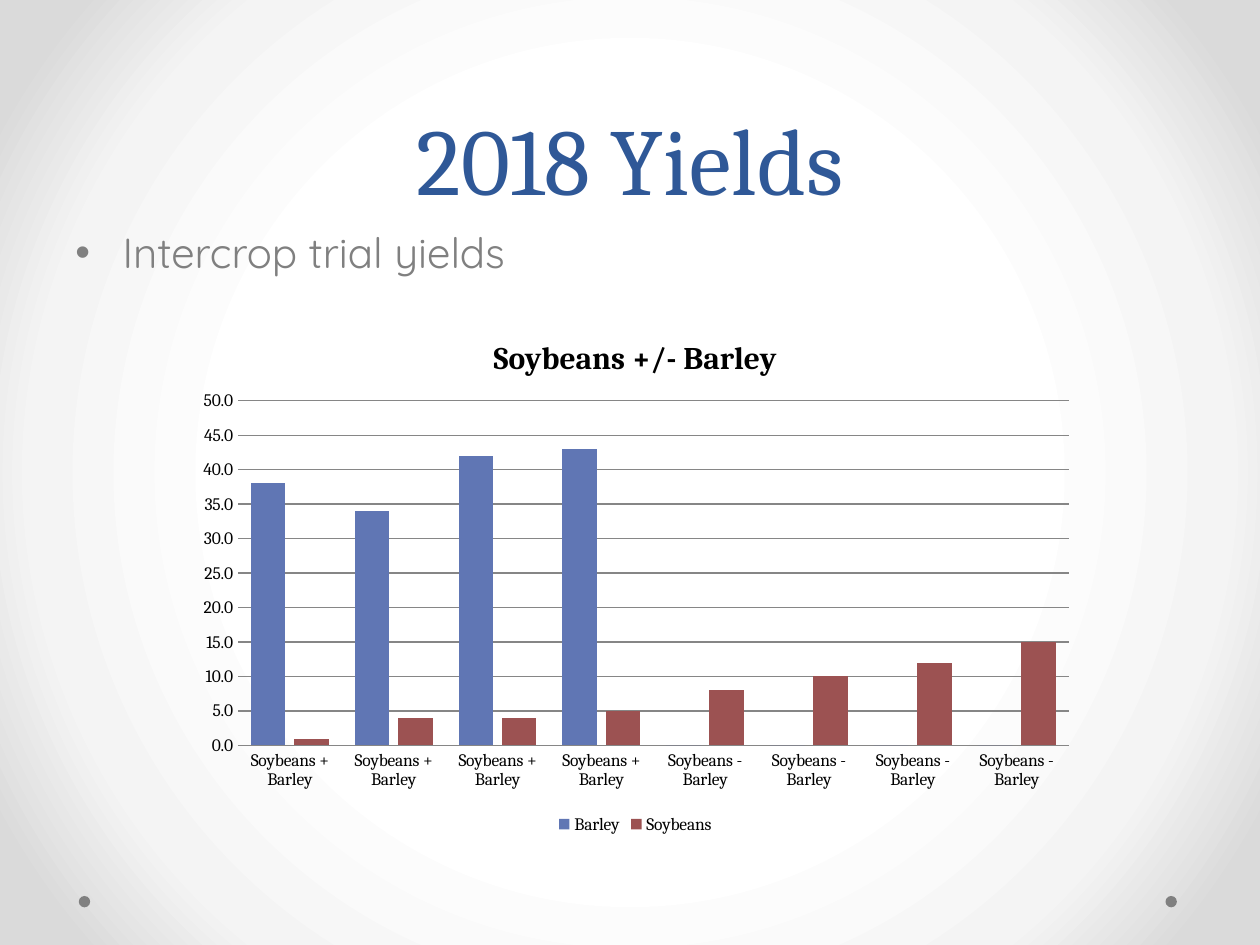
import pptx
import pptx.chart.data
import pptx.dml.color
import pptx.enum.chart
import pptx.enum.shapes
import pptx.enum.text
import pptx.oxml
import pptx.oxml.ns
import pptx.util

Pt = pptx.util.Pt
COLORS = {
    "title": "2F5897",
    "grey": "808080",
    "text": "000000",
    "grid": "868686",
    "Barley": "6076B4",
    "Soybeans": "9C5252",
}
BACKGROUND_STOPS = [(50, "FFFFFF"), (76, "F4F4F4"), (92, "DADADA")]
PLOT_AREA = {"x": 0.06, "y": 0.165, "w": 0.92, "h": 0.657}
CATEGORIES = ["Soybeans + Barley"] * 4 + ["Soybeans - Barley"] * 4
YIELDS = {
    "Barley": [38, 34, 42, 43, 0, 0, 0, 0],
    "Soybeans": [1, 4, 4, 5, 8, 10, 12, 15],
}


def color(name):
    return pptx.dml.color.RGBColor.from_string(COLORS[name])


def set_font(font, face, size, name, bold=False):
    font.name = face
    font.size = Pt(size)
    font.bold = bold
    font.color.rgb = color(name)


def paint_background(page):
    page.background.fill.gradient()
    gradient = page._element.find(".//" + pptx.oxml.ns.qn("a:gradFill"))
    stops = "".join(
        f'<a:gs pos="{position * 1000}"><a:srgbClr val="{value}"/></a:gs>'
        for position, value in BACKGROUND_STOPS
    )
    circle = pptx.oxml.parse_xml(
        f'<a:gradFill {pptx.oxml.ns.nsdecls("a")} rotWithShape="1"><a:gsLst>{stops}</a:gsLst>'
        '<a:path path="circle"><a:fillToRect l="50000" t="50000" r="50000" b="50000"/></a:path>'
        "</a:gradFill>"
    )
    gradient.getparent().replace(gradient, circle)


def add_dot(page, left):
    dot = page.shapes.add_shape(
        pptx.enum.shapes.MSO_SHAPE.OVAL, Pt(left), Pt(512), Pt(6.5), Pt(6.5)
    )
    dot.shadow.inherit = False
    dot.fill.solid()
    dot.fill.fore_color.rgb = color("grey")
    dot.line.fill.background()


def add_text(page, text, top, height, face, size, name):
    box = page.shapes.add_textbox(Pt(36), Pt(top), Pt(648), Pt(height))
    box.text_frame.word_wrap = True
    para = box.text_frame.paragraphs[0]
    para.text = text
    set_font(para.font, face, size, name)
    return box, para


def add_title(page):
    box, para = add_text(page, "2018 Yields", 0, 126, "Cambria", 54, "title")
    box.text_frame.vertical_anchor = pptx.enum.text.MSO_ANCHOR.BOTTOM
    para.alignment = pptx.enum.text.PP_ALIGN.CENTER
    para.line_spacing = Pt(58)


def add_bullet(page):
    box, para = add_text(page, "Intercrop trial yields", 126, 356.4, "Quicksand", 24, "grey")
    para.space_before = Pt(4.8)
    properties = para._p.get_or_add_pPr()
    properties.set("marL", str(Pt(27)))
    properties.set("indent", str(-Pt(27)))
    namespace = pptx.oxml.ns.nsdecls("a")
    properties.append(pptx.oxml.parse_xml(f'<a:buFont {namespace} typeface="Arial"/>'))
    properties.append(pptx.oxml.parse_xml(f'<a:buChar {namespace} char="•"/>'))


def place_plot(chart):
    area = chart._chartSpace.find(".//" + pptx.oxml.ns.qn("c:plotArea"))
    for old in area.findall(pptx.oxml.ns.qn("c:layout")):
        area.remove(old)
    sizes = "".join(f'<c:{key} val="{value}"/>' for key, value in PLOT_AREA.items())
    area.insert(0, pptx.oxml.parse_xml(
        f'<c:layout {pptx.oxml.ns.nsdecls("c")}><c:manualLayout>'
        '<c:layoutTarget val="inner"/><c:xMode val="edge"/><c:yMode val="edge"/>'
        f"{sizes}</c:manualLayout></c:layout>"
    ))


def style_axes(chart):
    for axis in (chart.category_axis, chart.value_axis):
        axis.major_tick_mark = pptx.enum.chart.XL_TICK_MARK.NONE
        axis.minor_tick_mark = pptx.enum.chart.XL_TICK_MARK.NONE
    chart.category_axis.format.line.color.rgb = color("grid")
    values = chart.value_axis
    values.minimum_scale = 0
    values.maximum_scale = 50
    values.major_unit = 5
    values.format.line.fill.background()
    values.has_major_gridlines = True
    values.major_gridlines.format.line.color.rgb = color("grid")
    values.tick_labels.number_format = "0.0"
    values.tick_labels.number_format_is_linked = False


def add_yield_chart(page):
    data = pptx.chart.data.CategoryChartData(number_format="0.0")
    data.categories = CATEGORIES
    for name, values in YIELDS.items():
        data.add_series(name, values)
    chart = page.shapes.add_chart(
        pptx.enum.chart.XL_CHART_TYPE.COLUMN_CLUSTERED,
        Pt(105), Pt(179.5), Pt(516), Pt(300), data,
    ).chart
    set_font(chart.font, "Cambria", 10, "text")
    chart.has_title = True
    para = chart.chart_title.text_frame.paragraphs[0]
    para.text = "Soybeans +/- Barley"
    set_font(para.font, "Cambria", 18, "text", bold=True)
    chart.has_legend = True
    chart.legend.position = pptx.enum.chart.XL_LEGEND_POSITION.BOTTOM
    chart.legend.include_in_layout = False
    plot = chart.plots[0]
    plot.gap_width = 75
    plot.overlap = -25
    plot.vary_by_categories = False
    for series in plot.series:
        series.format.fill.solid()
        series.format.fill.fore_color.rgb = color(series.name)
    style_axes(chart)
    place_plot(chart)


def main():
    deck = pptx.Presentation()
    deck.slide_width = Pt(720)
    deck.slide_height = Pt(540)
    page = deck.slides.add_slide(deck.slide_layouts[6])
    paint_background(page)
    for left in (666, 45):
        add_dot(page, left)
    add_title(page)
    add_bullet(page)
    add_yield_chart(page)
    deck.save("out.pptx")


if __name__ == "__main__":
    main()
